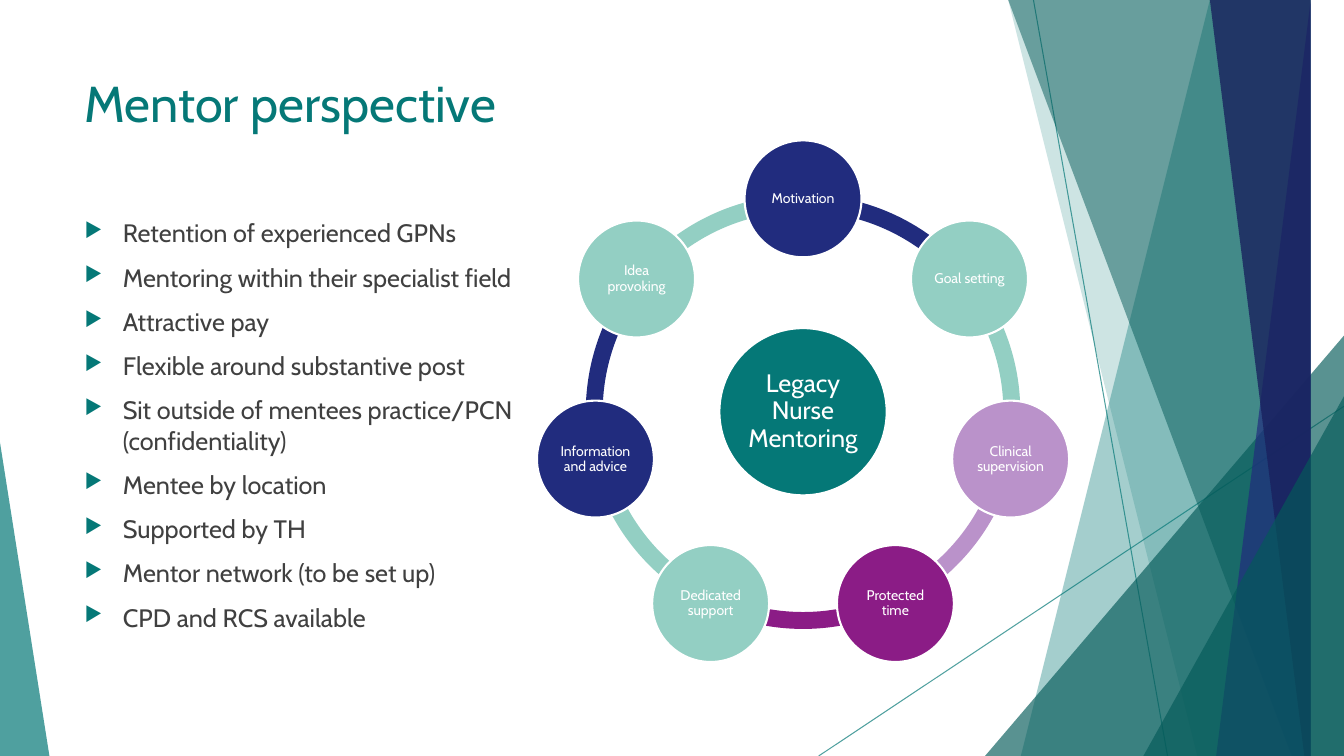
import math

import lxml.etree
import pptx
import pptx.dml.color
import pptx.enum.shapes
import pptx.enum.text
import pptx.oxml.ns
import pptx.util

Inches = pptx.util.Inches
Pt = pptx.util.Pt
SHAPES = pptx.enum.shapes.MSO_SHAPE
ALIGN = pptx.enum.text.PP_ALIGN
ANCHOR = pptx.enum.text.MSO_ANCHOR
qn = pptx.oxml.ns.qn

FONT = "Cabin"
WIDTH, HEIGHT = 13.33, 7.5
TEAL, DARK_TEAL, MINT = "057877", "045A59", "93CFC3"
NAVY, DARK_NAVY = "212C7E", "19215E"
PURPLE, LILAC = "8B1C86", "BA92CA"
WHITE, GREY = "FFFFFF", "404040"

BENEFITS = [
    "Retention of experienced GPNs",
    "Mentoring within their specialist field",
    "Attractive pay",
    "Flexible around substantive post",
    "Sit outside of mentees practice/PCN (confidentiality)",
    "Mentee by location",
    "Supported by TH",
    "Mentor network (to be set up)",
    "CPD and RCS available",
]
THEMES = [
    ("Motivation", NAVY),
    ("Goal setting", MINT),
    ("Clinical supervision", LILAC),
    ("Protected time", PURPLE),
    ("Dedicated support", MINT),
    ("Information and advice", NAVY),
    ("Idea provoking", MINT),
]


def rgb(code):
    """Return the colour for a hex string."""
    return pptx.dml.color.RGBColor.from_string(code)


def set_alpha(fill_parent, percent):
    """Make the solid fill under an element partly transparent."""
    colour = next(fill_parent.iter(qn("a:srgbClr")))
    lxml.etree.SubElement(colour, qn("a:alpha"), val=str(percent * 1000))


def paint(shape, code, alpha=100):
    """Give a shape a plain fill with no outline or shadow."""
    shape.shadow.inherit = False
    shape.fill.solid()
    shape.fill.fore_color.rgb = rgb(code)
    if alpha < 100:
        set_alpha(shape._element.spPr, alpha)
    shape.line.fill.background()


def style(paragraph, size, code):
    """Format every run of a paragraph."""
    for run in paragraph.runs:
        run.font.name = FONT
        run.font.size = Pt(size)
        run.font.color.rgb = rgb(code)


def add_ray(slide, start, end):
    """Draw one thin translucent line."""
    ray = slide.shapes.add_connector(
        pptx.enum.shapes.MSO_CONNECTOR.STRAIGHT, *map(Inches, start + end))
    ray.line.color.rgb = rgb(TEAL)
    ray.line.width = Pt(0.75)
    set_alpha(ray._element.spPr, 70)
    lxml.etree.SubElement(ray._element.spPr, qn("a:effectLst"))


def add_band(slide, top_left, top_right, bottom_right, bottom_left, code, alpha):
    """Draw a translucent band running the full height of the slide."""
    builder = slide.shapes.build_freeform(top_left, 0, scale=Inches(1))
    builder.add_line_segments(
        [(top_right, 0), (bottom_right, HEIGHT), (bottom_left, HEIGHT)])
    paint(builder.convert_to_shape(), code, alpha)


def add_wedge(slide, left, top, right, apex, code, alpha):
    """Draw a triangle standing on the bottom edge, apex 0 left or 1 right."""
    wedge = slide.shapes.add_shape(
        SHAPES.ISOSCELES_TRIANGLE, Inches(left), Inches(top),
        Inches(right - left), Inches(HEIGHT - top))
    wedge.adjustments[0] = apex
    paint(wedge, code, alpha)


def add_backdrop(slide):
    """Draw the overlapping facets along both slide edges."""
    add_ray(slide, (10.25, 0), (11.58, HEIGHT))
    add_ray(slide, (WIDTH, 4.03), (8.12, HEIGHT))
    add_band(slide, 12.28, WIDTH, WIDTH, 10.04, TEAL, 36)
    add_band(slide, 10.5, WIDTH, WIDTH, 11.83, TEAL, 20)
    add_wedge(slide, 9.77, 3.33, WIDTH, 1, DARK_TEAL, 66)
    add_band(slide, 10.21, WIDTH, WIDTH, 12.91, DARK_TEAL, 50)
    add_band(slide, 13.03, WIDTH, WIDTH, 11.92, NAVY, 70)
    add_band(slide, 11.96, WIDTH, WIDTH, 13.18, DARK_NAVY, 80)
    add_wedge(slide, 11.34, 3.93, WIDTH, 1, DARK_TEAL, 66)
    add_wedge(slide, 0, 4.39, 0.49, 0, TEAL, 70)


def add_text(slide, left, top, width, height, text):
    """Add a wrapping text box and return its frame."""
    frame = slide.shapes.add_textbox(*map(Inches, (left, top, width, height))).text_frame
    frame.word_wrap = True
    frame.text = text
    return frame


def add_title(slide, left, top, width, height):
    """Place the slide heading."""
    heading = add_text(slide, left, top, width, height, "Mentor perspective")
    style(heading.paragraphs[0], 36, TEAL)


def add_bullet(paragraph):
    """Give a paragraph a hanging triangular bullet."""
    properties = paragraph._p.get_or_add_pPr()
    properties.set("marL", str(Inches(0.38)))
    properties.set("indent", str(-Inches(0.38)))
    colour = lxml.etree.SubElement(properties, qn("a:buClr"))
    lxml.etree.SubElement(colour, qn("a:srgbClr"), val=TEAL)
    lxml.etree.SubElement(properties, qn("a:buSzPct"), val="80000")
    lxml.etree.SubElement(properties, qn("a:buChar"), char="▶")


def add_benefits(slide, left, top, width, height):
    """Place the bulleted list of benefits."""
    frame = add_text(slide, left, top, width, height, "\n".join(BENEFITS))
    for index, benefit in enumerate(frame.paragraphs):
        add_bullet(benefit)
        if index:
            benefit.space_before = Pt(10)
        style(benefit, 18, GREY)


def add_disc(slide, centre_x, centre_y, diameter, label, code, size, inset):
    """Draw a white-edged circle with a centred label."""
    disc = slide.shapes.add_shape(
        SHAPES.OVAL, Inches(centre_x - diameter / 2), Inches(centre_y - diameter / 2),
        Inches(diameter), Inches(diameter))
    paint(disc, code)
    disc.line.color.rgb = rgb(WHITE)
    disc.line.width = Pt(1.5)
    frame = disc.text_frame
    frame.word_wrap = True
    frame.vertical_anchor = ANCHOR.MIDDLE
    frame.margin_left = frame.margin_right = Inches(inset)
    frame.margin_top = frame.margin_bottom = Inches(inset)
    frame.text = label
    frame.paragraphs[0].alignment = ALIGN.CENTER
    frame.paragraphs[0].line_spacing = 0.9
    style(frame.paragraphs[0], size, WHITE)


def add_cycle(slide, left, top, diameter):
    """Draw the ring of themes around the central hub."""
    centre_x, centre_y = left + diameter / 2, top + diameter / 2
    orbit = 0.49 * diameter
    step = 360 / len(THEMES)
    for index, (label, code) in enumerate(THEMES):
        arc = slide.shapes.add_shape(
            SHAPES.BLOCK_ARC, Inches(left), Inches(top), Inches(diameter), Inches(diameter))
        start = 270 + index * step
        arc.adjustments[0] = start % 360 * 0.6
        arc.adjustments[1] = (start + step) % 360 * 0.6
        arc.adjustments[2] = 0.039
        paint(arc, code)
    add_disc(slide, centre_x, centre_y, 1.66, "Legacy Nurse Mentoring", TEAL, 18, 0.03)
    for index, (label, code) in enumerate(THEMES):
        angle = math.radians(index * step)
        add_disc(slide, centre_x + orbit * math.sin(angle),
                 centre_y - orbit * math.cos(angle), 1.16, label, code, 10, 0.01)


def main():
    """Build and save the slide."""
    deck = pptx.Presentation()
    deck.slide_width, deck.slide_height = Inches(WIDTH), Inches(HEIGHT)
    slide = deck.slides.add_slide(deck.slide_layouts[6])
    add_backdrop(slide)
    add_title(slide, 0.74, 0.67, 9.4, 1.44)
    add_benefits(slide, 0.74, 2.11, 4.58, 4.45)
    add_cycle(slide, 5.81, 1.93, 4.31)
    deck.save("out.pptx")


if __name__ == "__main__":
    main()
